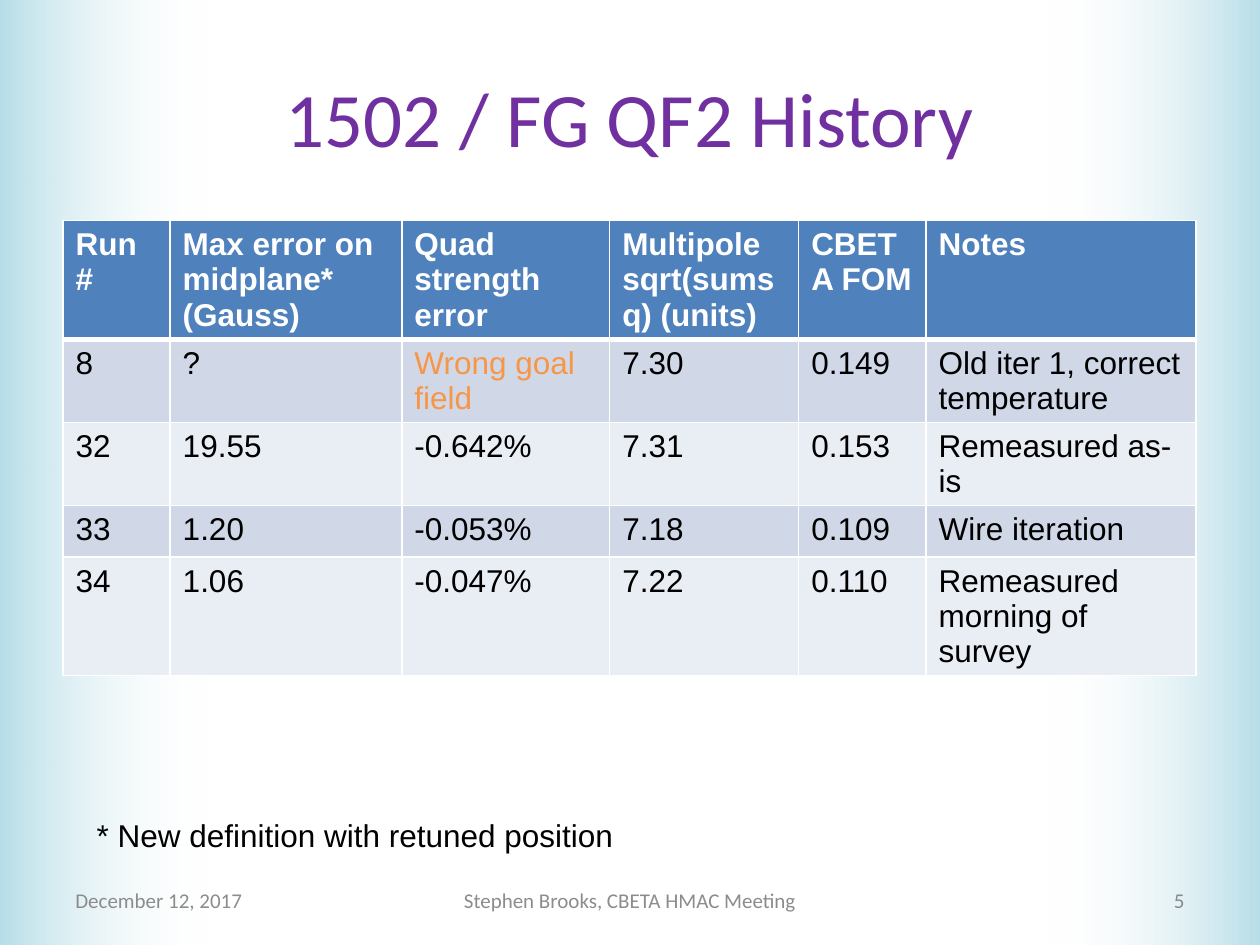
from dataclasses import dataclass

from lxml.etree import SubElement
from pptx import Presentation
from pptx.dml.color import RGBColor
from pptx.enum.text import MSO_ANCHOR, PP_ALIGN
from pptx.oxml import parse_xml
from pptx.oxml.ns import nsdecls, qn
from pptx.slide import Slide
from pptx.table import _Cell
from pptx.text.text import TextFrame
from pptx.util import Cm, Pt


@dataclass(frozen=True)
class Theme:
    heading_font: str = "Calibri"
    body_font: str = "Arial"
    title_size: int = 44
    body_size: int = 18
    footer_size: int = 12
    title: str = "7030A0"
    header: str = "4F81BD"
    bands: tuple[str, str] = ("D0D8E8", "E9EDF4")
    warning: str = "F79646"
    edge: str = "B7DEE8"
    white: str = "FFFFFF"
    black: str = "000000"
    footer: str = "8C8C8C"
    page_number: str = "898989"


@dataclass(frozen=True)
class Box:
    left: float
    top: float
    width: float
    height: float

    def lengths(self) -> tuple[Cm, Cm, Cm, Cm]:
        return Cm(self.left), Cm(self.top), Cm(self.width), Cm(self.height)


@dataclass(frozen=True)
class FooterItem:
    text: str
    left: float
    width: float
    align: PP_ALIGN
    color: str


THEME = Theme()
SLIDE_WIDTH, SLIDE_HEIGHT = 25.4, 19.05
EDGE_WIDTH = 4.29
COLUMN_WIDTHS = (2.16, 4.67, 4.19, 3.81, 2.57, 5.44)
ROW_HEIGHT = 1.04
WRONG_GOAL = "Wrong goal field"
HEADER = ("Run #", "Max error on midplane* (Gauss)", "Quad strength error",
          "Multipole sqrt(sumsq) (units)", "CBETA FOM", "Notes")
RUNS = (
    ("8", "?", WRONG_GOAL, "7.30", "0.149", "Old iter 1, correct temperature"),
    ("32", "19.55", "-0.642%", "7.31", "0.153", "Remeasured as-is"),
    ("33", "1.20", "-0.053%", "7.18", "0.109", "Wire iteration"),
    ("34", "1.06", "-0.047%", "7.22", "0.110", "Remeasured morning of survey"),
)
FOOTER = (
    FooterItem("December 12, 2017", 1.27, 5.93, PP_ALIGN.LEFT, THEME.footer),
    FooterItem("Stephen Brooks, CBETA HMAC Meeting", 8.68, 8.04,
               PP_ALIGN.CENTER, THEME.footer),
    FooterItem("5", 18.2, 5.93, PP_ALIGN.RIGHT, THEME.page_number),
)


def write(frame: TextFrame, text: str, *, size: int = THEME.body_size,
          font: str = THEME.body_font, color: str = THEME.black,
          bold: bool = False, align: PP_ALIGN = PP_ALIGN.LEFT,
          anchor: MSO_ANCHOR = MSO_ANCHOR.TOP, wrap: bool = True) -> None:
    frame.word_wrap = wrap
    frame.vertical_anchor = anchor
    paragraph = frame.paragraphs[0]
    paragraph.alignment = align
    run = paragraph.add_run()
    run.text = text
    run.font.name = font
    run.font.size = Pt(size)
    run.font.bold = bold
    run.font.color.rgb = RGBColor.from_string(color)


def add_edge(slide: Slide, left: float, rotation: int) -> None:
    """Draw a side band that fades towards the middle of the slide."""
    edge = slide.shapes.add_shape(
        1, *Box(left, 0, EDGE_WIDTH, SLIDE_HEIGHT).lengths())
    edge.rotation = rotation
    edge.shadow.inherit = False
    edge.line.fill.background()
    edge.fill.gradient()
    edge.fill.gradient_angle = 0
    for stop, color in zip(edge.fill.gradient_stops, (THEME.edge, THEME.white)):
        stop.color.rgb = RGBColor.from_string(color)
    clear_color = edge.fill._fill._gradFill.findall(".//" + qn("a:srgbClr"))[-1]
    SubElement(clear_color, qn("a:alpha"), val="0")


def set_borders(cell: _Cell, top: int, bottom: int) -> None:
    """Give a cell white borders; left and right are one point wide."""
    properties = cell._tc.get_or_add_tcPr()
    sides = (("L", 1), ("R", 1), ("T", top), ("B", bottom))
    for position, (side, width) in enumerate(sides):
        properties.insert(position, parse_xml(
            f'<a:ln{side} {nsdecls("a")} w="{Pt(width)}"><a:solidFill>'
            f'<a:srgbClr val="{THEME.white}"/></a:solidFill></a:ln{side}>'))


def add_run_table(slide: Slide) -> None:
    rows = (HEADER, *RUNS)
    place = Box(1.27, 4.45, sum(COLUMN_WIDTHS), ROW_HEIGHT * len(rows))
    table = slide.shapes.add_table(
        len(rows), len(HEADER), *place.lengths()).table
    for column, width in zip(table.columns, COLUMN_WIDTHS):
        column.width = Cm(width)
    for row_index, values in enumerate(rows):
        is_header = row_index == 0
        fill = THEME.header if is_header else THEME.bands[(row_index - 1) % 2]
        for column_index, value in enumerate(values):
            cell = table.cell(row_index, column_index)
            cell.fill.solid()
            cell.fill.fore_color.rgb = RGBColor.from_string(fill)
            set_borders(cell, top=3 if row_index == 1 else 1,
                        bottom=3 if is_header else 1)
            color = THEME.white if is_header else THEME.black
            if value == WRONG_GOAL:
                color = THEME.warning
            write(cell.text_frame, value, color=color, bold=is_header)


def add_footer_item(slide: Slide, item: FooterItem) -> None:
    place = Box(item.left, 17.65, item.width, 1.01)
    footer = slide.shapes.add_textbox(*place.lengths())
    write(footer.text_frame, item.text, size=THEME.footer_size,
          font=THEME.heading_font, color=item.color, align=item.align,
          anchor=MSO_ANCHOR.MIDDLE)


def main() -> None:
    presentation = Presentation()
    presentation.slide_width = Cm(SLIDE_WIDTH)
    presentation.slide_height = Cm(SLIDE_HEIGHT)
    slide = presentation.slides.add_slide(presentation.slide_layouts[5])
    add_edge(slide, SLIDE_WIDTH - EDGE_WIDTH, 180)
    add_edge(slide, 0, 0)

    title = slide.shapes.title
    title.left, title.top, title.width, title.height = Box(
        1.27, 0.76, 22.86, 3.18).lengths()
    write(title.text_frame, "1502 / FG QF2 History", size=THEME.title_size,
          font=THEME.heading_font, color=THEME.title, align=PP_ALIGN.CENTER,
          anchor=MSO_ANCHOR.MIDDLE)

    add_run_table(slide)
    for item in FOOTER:
        add_footer_item(slide, item)
    footnote = slide.shapes.add_textbox(*Box(1.7, 16.33, 11.02, 1.02).lengths())
    write(footnote.text_frame, "* New definition with retuned position",
          wrap=False)
    presentation.save("out.pptx")


if __name__ == "__main__":
    main()
